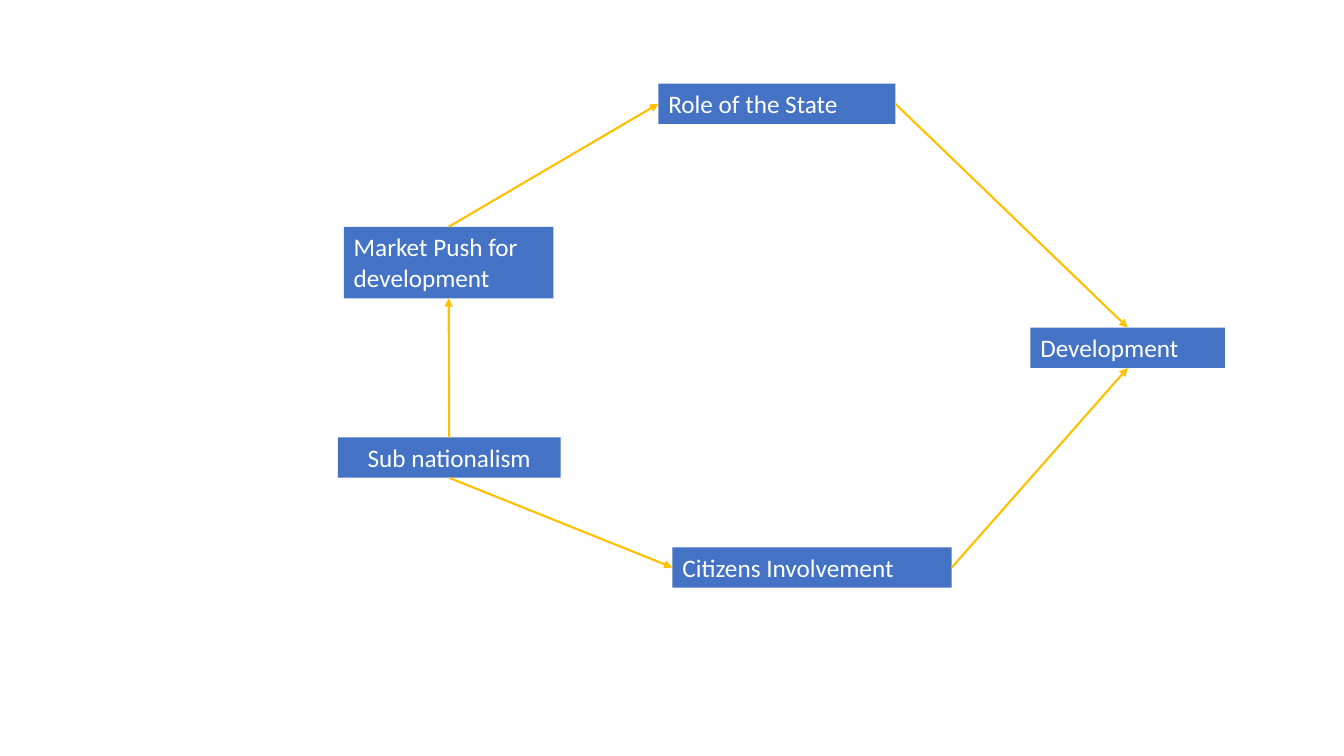
from lxml.etree import SubElement
from pptx import Presentation
from pptx.dml.color import RGBColor
from pptx.enum.shapes import MSO_CONNECTOR, MSO_SHAPE
from pptx.enum.text import MSO_ANCHOR, PP_ALIGN
from pptx.oxml.ns import qn
from pptx.util import Inches, Pt

COLORS = {"box": "4472C4", "text": "FFFFFF", "arrow": "FFC000"}
FONT = "Calibri"
TOP, LEFT, BOTTOM, RIGHT = range(4)

# name: (text, left, top, width, height, alignment)
BOXES = {
    "market": ("Market Push for development", 3.41, 2.25, 2.08, 0.71, PP_ALIGN.LEFT),
    "state": ("Role of the State", 6.53, 0.83, 2.35, 0.4, PP_ALIGN.LEFT),
    "development": ("Development", 10.22, 3.25, 1.93, 0.4, PP_ALIGN.LEFT),
    "citizens": ("Citizens Involvement", 6.67, 5.43, 2.77, 0.4, PP_ALIGN.LEFT),
    "nationalism": ("Sub nationalism", 3.35, 4.34, 2.21, 0.4, PP_ALIGN.CENTER),
}

# (from box, side, to box, side)
ARROWS = [
    ("market", TOP, "state", LEFT),
    ("nationalism", TOP, "market", BOTTOM),
    ("nationalism", BOTTOM, "citizens", LEFT),
    ("citizens", RIGHT, "development", BOTTOM),
    ("state", RIGHT, "development", TOP),
]


def color(name):
    return RGBColor.from_string(COLORS[name])


def add_box(slide, text, left, top, width, height, align):
    sp = slide.shapes.add_shape(MSO_SHAPE.RECTANGLE, *map(Inches, (left, top, width, height)))
    sp.shadow.inherit = False
    sp.fill.solid()
    sp.fill.fore_color.rgb = color("box")
    sp.line.fill.background()
    tf = sp.text_frame
    tf.word_wrap = True
    tf.vertical_anchor = MSO_ANCHOR.TOP
    p = tf.paragraphs[0]
    p.alignment = align
    r = p.add_run()
    r.text = text
    r.font.name = FONT
    r.font.size = Pt(18)
    r.font.color.rgb = color("text")
    return sp


def add_arrow(slide, start, start_side, end, end_side):
    cxn = slide.shapes.add_connector(MSO_CONNECTOR.STRAIGHT, 0, 0, 0, 0)
    cxn.begin_connect(start, start_side)
    cxn.end_connect(end, end_side)
    cxn.line.color.rgb = color("arrow")
    cxn.line.width = Pt(1.5)
    SubElement(cxn.line._get_or_add_ln(), qn("a:tailEnd"), type="triangle")
    SubElement(cxn._element.spPr, qn("a:effectLst"))


def main():
    prs = Presentation()
    prs.slide_width, prs.slide_height = Inches(13.33), Inches(7.5)
    slide = prs.slides.add_slide(prs.slide_layouts[6])
    boxes = {name: add_box(slide, *box) for name, box in BOXES.items()}
    for start, start_side, end, end_side in ARROWS:
        add_arrow(slide, boxes[start], start_side, boxes[end], end_side)
    prs.save("out.pptx")


if __name__ == "__main__":
    main()
